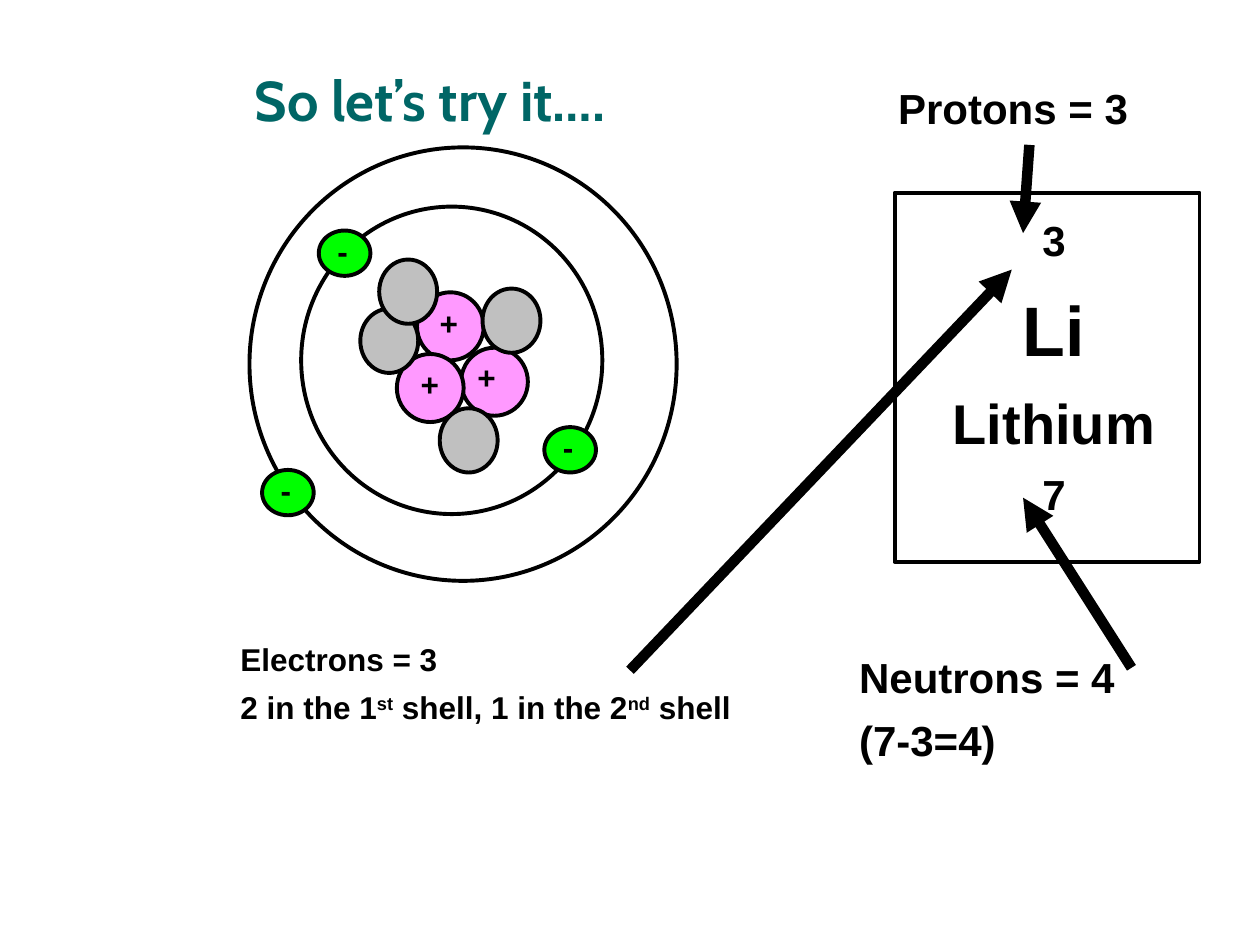
from lxml import etree
from pptx import Presentation
from pptx.dml.color import RGBColor
from pptx.enum.shapes import MSO_CONNECTOR, MSO_SHAPE
from pptx.enum.text import MSO_ANCHOR, PP_ALIGN
from pptx.oxml.ns import qn
from pptx.util import Inches, Pt

OVAL, RECTANGLE = MSO_SHAPE.OVAL, MSO_SHAPE.RECTANGLE
STRAIGHT = MSO_CONNECTOR.STRAIGHT
LEFT, CENTER = PP_ALIGN.LEFT, PP_ALIGN.CENTER
MIDDLE = MSO_ANCHOR.MIDDLE
BLACK, TEAL = "000000", "006666"
PINK, GREY, GREEN = "FF99FF", "C0C0C0", "00FF00"
color = RGBColor.from_string

deck = Presentation()
deck.slide_width, deck.slide_height = Inches(10), Inches(7.5)
page = deck.slides.add_slide(deck.slide_layouts[5])

# The page is a grid of 100 columns by 75 rows of square cells
CELL = deck.slide_width // 100


def add_outline(kind, left, top, width, height, fill=None):
    shape = page.shapes.add_shape(kind, *(int(n * CELL) for n in (left, top, width, height)))
    shape.shadow.inherit = False
    if fill:
        shape.fill.solid()
        shape.fill.fore_color.rgb = color(fill)
    else:
        shape.fill.background()
    shape.line.color.rgb = color(BLACK)
    shape.line.width = Pt(2.25)


def add_label(left, top, width, height, lines, align=LEFT):
    """Each line is (size, spans); every second span is a superscript."""
    box = page.shapes.add_textbox(*(int(n * CELL) for n in (left, top, width, height)))
    frame = box.text_frame
    frame.word_wrap = True
    for index, (size, spans) in enumerate(lines):
        para = frame.add_paragraph() if index else frame.paragraphs[0]
        para.alignment = align
        para.line_spacing = 0.8
        if index:
            para.space_before = Pt(round(size * 0.55))
        for position, text in enumerate(spans):
            span = para.add_run()
            span.text = text
            span.font.name = "Arial"
            span.font.size = Pt(size)
            span.font.bold = True
            span.font.color.rgb = color(BLACK)
            if position % 2:
                span.font._element.set("baseline", "30000")


# Title
title = page.shapes.title
title.left, title.top, title.width, title.height = (int(n * CELL) for n in (19.2, 3.3, 76.7, 9.2))
title.text_frame.text = "So let’s try it…."
title.text_frame.vertical_anchor = MIDDLE
heading = title.text_frame.paragraphs[0]
heading.alignment = LEFT
heading.font.name = "Cabin"
heading.font.size = Pt(32)
heading.font.bold = True
heading.font.color.rgb = color(TEAL)

# Element card
add_outline(RECTANGLE, 71, 15.3, 24.2, 29.3)
add_label(72.7, 17.3, 21.9, 25,
          [(24, ["3"]), (40, ["Li"]), (32, ["Lithium"]), (24, ["7"])], CENTER)

# Nucleus: protons with their signs, then neutrons
for left, top, sign_left, sign_top in [(33.1, 23.2, 33.9, 24.2),
                                       (36.6, 27.6, 36.9, 28.5),
                                       (31.5, 28.1, 32.4, 29.1)]:
    add_outline(OVAL, left, top, 5.3, 5.4, PINK)
    add_label(sign_left, sign_top, 5.7, 3.4, [(18, ["+"])])
for left, top in [(28.6, 24.5), (38.3, 22.9), (30.1, 20.6), (34.9, 32.4)]:
    add_outline(OVAL, left, top, 4.6, 5.1, GREY)

# Shells and electrons
add_outline(OVAL, 23.9, 16.4, 23.9, 24.4)
add_outline(OVAL, 19.8, 11.7, 33.9, 34.4)
for left, top in [(43.2, 33.9), (25.3, 18.3), (20.8, 37.3)]:
    add_outline(OVAL, left, top, 4.1, 3.6, GREEN)
    add_label(left + 0.5, top + 0.2, 3.4, 3.4, [(18, ["-"])])

# Particle counts
add_label(70.3, 6.8, 22.1, 4.2, [(24, ["Protons = 3"])])
add_label(67.2, 52, 28.7, 9.4, [(24, ["Neutrons = 4"]), (24, ["(7-3=4)"])])
add_label(18.1, 50.9, 44.9, 7.3,
          [(18, ["Electrons = 3"]),
           (18, ["2 in the 1", "st", " shell, 1 in the 2", "nd", " shell"])])

# Arrows from the counts to the card
for ends in [(81.7, 11.5, 81.2, 18.5), (89.8, 53, 81.2, 39.5), (50, 53.2, 80.3, 21.4)]:
    arrow = page.shapes.add_connector(STRAIGHT, *(int(n * CELL) for n in ends))
    arrow.line.color.rgb = color(BLACK)
    arrow.line.width = Pt(6)
    etree.SubElement(arrow.line._get_or_add_ln(), qn("a:tailEnd"), type="triangle")
    etree.SubElement(arrow._element.spPr, qn("a:effectLst"))

deck.save("out.pptx")
